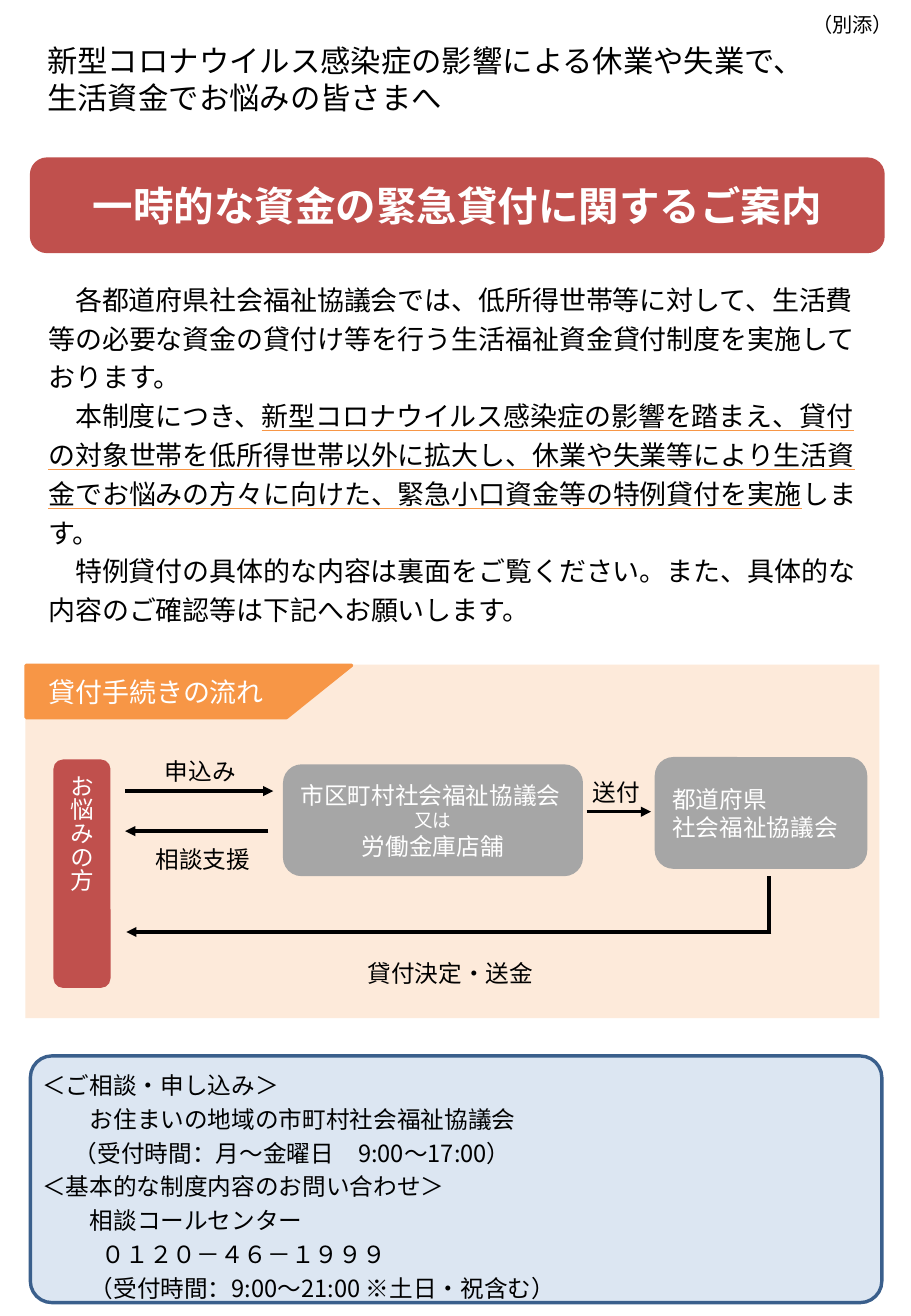
from lxml import etree
from pptx import Presentation
from pptx.dml.color import RGBColor
from pptx.enum.shapes import MSO_CONNECTOR, MSO_SHAPE
from pptx.enum.text import MSO_ANCHOR, MSO_AUTO_SIZE, PP_ALIGN
from pptx.oxml.ns import qn
from pptx.util import Inches, Pt

RECT, ROUND = MSO_SHAPE.RECTANGLE, MSO_SHAPE.ROUNDED_RECTANGLE
MANUAL_INPUT = MSO_SHAPE.FLOWCHART_MANUAL_INPUT
LEFT, CENTER, RIGHT = PP_ALIGN.LEFT, PP_ALIGN.CENTER, PP_ALIGN.RIGHT
FONT = "Noto Sans CJK JP"
COLORS = {
    "text": "000000", "white": "FFFFFF", "red": "C0504D", "orange": "F79646",
    "peach": "FDEADA", "gray": "A6A6A6", "pale_blue": "DCE6F2", "blue": "3A5F8C",
}


def rgb(name):
    return RGBColor.from_string(COLORS[name])


def add_run(paragraph, text, size, color="text", latin=FONT, **formats):
    run = paragraph.add_run()
    run.text = text
    settings = {"size": Pt(size), "name": latin, **formats}
    for attribute, value in settings.items():
        setattr(run.font, attribute, value)
    run.font.color.rgb = rgb(color)
    east_asian = etree.Element(qn("a:ea"), typeface=FONT)
    run.font._element.find(qn("a:latin")).addnext(east_asian)
    return run


def underline_in(run, color):
    run.font.underline = True
    line_fill = etree.Element(qn("a:uFill"))
    solid = etree.SubElement(line_fill, qn("a:solidFill"))
    etree.SubElement(solid, qn("a:srgbClr"), val=COLORS[color])
    run.font._element.find(qn("a:latin")).addprevious(line_fill)


def add_paragraph(frame, index, align=LEFT, spacing=None, margin=0, first_indent=0):
    """Return paragraph `index`, with its indents in inches and line spacing in points."""
    paragraph = frame.add_paragraph() if index else frame.paragraphs[0]
    paragraph.alignment = align
    if spacing:
        paragraph.line_spacing = Pt(spacing)
    properties = paragraph._p.get_or_add_pPr()
    properties.set("marL", str(Inches(margin)))
    properties.set("indent", str(Inches(first_indent)))
    return paragraph


def add_box(slide, kind, box, fill, line=None):
    shape = slide.shapes.add_shape(kind, *map(Inches, box))
    shape.shadow.inherit = False
    shape.fill.solid()
    shape.fill.fore_color.rgb = rgb(fill)
    if line:
        shape.line.color.rgb = rgb(line)
        shape.line.width = Pt(2)
    else:
        shape.line.fill.background()
    shape.text_frame.vertical_anchor = MSO_ANCHOR.MIDDLE
    return shape


def write_lines(shape, lines, color="white", **formats):
    """Fill a shape with (text, size, alignment) lines."""
    for index, (text, size, align) in enumerate(lines):
        paragraph = add_paragraph(shape.text_frame, index, align)
        add_run(paragraph, text, size, color, **formats)


def turn_text(shape, direction):
    shape.text_frame._txBody.bodyPr.set("vert", direction)


def add_text_frame(slide, box):
    frame = slide.shapes.add_textbox(*map(Inches, box)).text_frame
    frame.word_wrap = True
    frame.auto_size = MSO_AUTO_SIZE.SHAPE_TO_FIT_TEXT
    return frame


def add_label(slide, box, text, size=14, align=CENTER, latin=FONT):
    frame = add_text_frame(slide, box)
    add_run(add_paragraph(frame, 0, align), text, size, latin=latin)


def add_line(slide, start, end, arrow=True):
    line = slide.shapes.add_connector(
        MSO_CONNECTOR.STRAIGHT, *map(Inches, (*start, *end)))
    line.line.color.rgb = rgb("text")
    line.line.width = Pt(2)
    if arrow:
        etree.SubElement(line.line._get_or_add_ln(), qn("a:tailEnd"), type="triangle")
    etree.SubElement(line._element.spPr, qn("a:effectLst"))


def add_heading(slide, x, y):
    add_label(slide, (x + 5.8, y, 1.39, 0.3), "（別添）", 12, RIGHT, "Calibri")
    add_label(slide, (x + 0.03, y + 0.25, 6.22, 0.71),
              "新型コロナウイルス感染症の影響による休業や失業で、生活資金でお悩みの皆さまへ", 18, LEFT)
    banner = add_box(slide, ROUND, (x, y + 1.26, 7.01, 0.76), "red", "red")
    write_lines(banner, [("一時的な資金の緊急貸付に関するご案内", 24, CENTER)], bold=True)


def add_explanation(slide, box):
    paragraphs = [
        [("各都道府県社会福祉協議会では、低所得世帯等に対して、生活費等の必要な資金の貸付け等を行う"
          "生活福祉資金貸付制度を実施しております。", False)],
        [("本制度につき、", False),
         ("新型コロナウイルス感染症の影響を踏まえ、貸付の対象世帯を低所得世帯以外に拡大し、"
          "休業や失業等により生活資金でお悩みの方々に向けた、緊急小口資金等の特例貸付を実施", True),
         ("します。", False)],
        [("特例貸付の具体的な内容は裏面をご覧ください。また、具体的な内容のご確認等は"
          "下記へお願いします。", False)],
    ]
    frame = add_text_frame(slide, box)
    for index, parts in enumerate(paragraphs):
        paragraph = add_paragraph(frame, index, spacing=23, first_indent=0.22)
        for text, stressed in parts:
            run = add_run(paragraph, text, 16)
            if stressed:
                underline_in(run, "orange")


def add_loan_flow(slide, x, y, width, height):
    def place(left, top, *size):
        return (x + left, y + top, *size)

    add_box(slide, RECT, (x, y, width, height), "peach")

    flow_title = add_box(slide, MANUAL_INPUT, place(1.13, -1.12, 0.43, 2.68),
                         "orange", "orange")
    flow_title.rotation = 90
    flow_title._element.spPr.xfrm.set("flipH", "1")
    turn_text(flow_title, "vert270")
    write_lines(flow_title, [("貸付手続きの流れ", 16, CENTER)])

    applicant = add_box(slide, ROUND, place(0.23, 0.78, 0.47, 1.88), "red")
    turn_text(applicant, "eaVert")
    write_lines(applicant, [("お悩みの方", 14, CENTER)])

    local_office = add_box(slide, ROUND, place(2.12, 0.82, 2.47, 0.92), "gray")
    write_lines(local_office, [("市区町村社会福祉協議会", 14, LEFT),
                               ("又は", 11, CENTER), ("労働金庫店舗", 14, CENTER)])

    prefecture = add_box(slide, ROUND, place(5.18, 0.76, 1.75, 0.92), "gray")
    write_lines(prefecture, [("都道府県", 14, LEFT), ("社会福祉協議会", 14, LEFT)])

    steps = [
        ("申込み", (0.89, 0.71, 1.1, 0.34), (0.82, 1.04), (2.04, 1.04)),
        ("相談支援", (0.91, 1.43, 1.1, 0.34), (2.0, 1.37), (0.82, 1.37)),
        ("送付", (4.55, 0.88, 0.63, 0.34), (4.62, 1.21), (5.15, 1.21)),
        ("貸付決定・送金", (2.42, 2.37, 2.16, 0.34), (6.14, 2.2), (0.83, 2.2)),
    ]
    for step, label_box, start, end in steps:
        add_line(slide, place(*start), place(*end))
        add_label(slide, place(*label_box), step)
    add_line(slide, place(6.12, 1.74), place(6.12, 2.21), arrow=False)


def add_contacts(slide, x, y, width, height):
    panel = add_box(slide, ROUND, (x, y, width, height), "pale_blue", "blue")
    panel.adjustments[0] = 0.087
    contacts = [
        ("＜ご相談・申し込み＞", 0),
        ("お住まいの地域の市町村社会福祉協議会", 0.39),
        ("（受付時間：月～金曜日\u30009:00～17:00）".replace("\u3000", "　"), 0.26),
        ("＜基本的な制度内容のお問い合わせ＞", 0),
        ("相談コールセンター", 0.39),
        ("０１２０－４６－１９９９", 0.49),
        ("（受付時間：9:00～21:00 ※土日・祝含む）", 0.39),
    ]
    frame = add_text_frame(slide, (x, y + 0.03, width - 0.16, height + 0.03))
    for index, (text, margin) in enumerate(contacts):
        add_run(add_paragraph(frame, index, spacing=20, margin=margin), text, 14)


def main():
    presentation = Presentation()
    presentation.slide_width, presentation.slide_height = Inches(7.5), Inches(10.83)
    slide = presentation.slides.add_slide(presentation.slide_layouts[6])
    add_heading(slide, 0.26, 0.05)
    add_explanation(slide, (0.3, 2.23, 7.01, 3))
    add_loan_flow(slide, 0.21, 5.47, 7.03, 2.91)
    add_contacts(slide, 0.25, 8.69, 7.01, 2.03)
    presentation.save("out.pptx")


if __name__ == "__main__":
    main()
